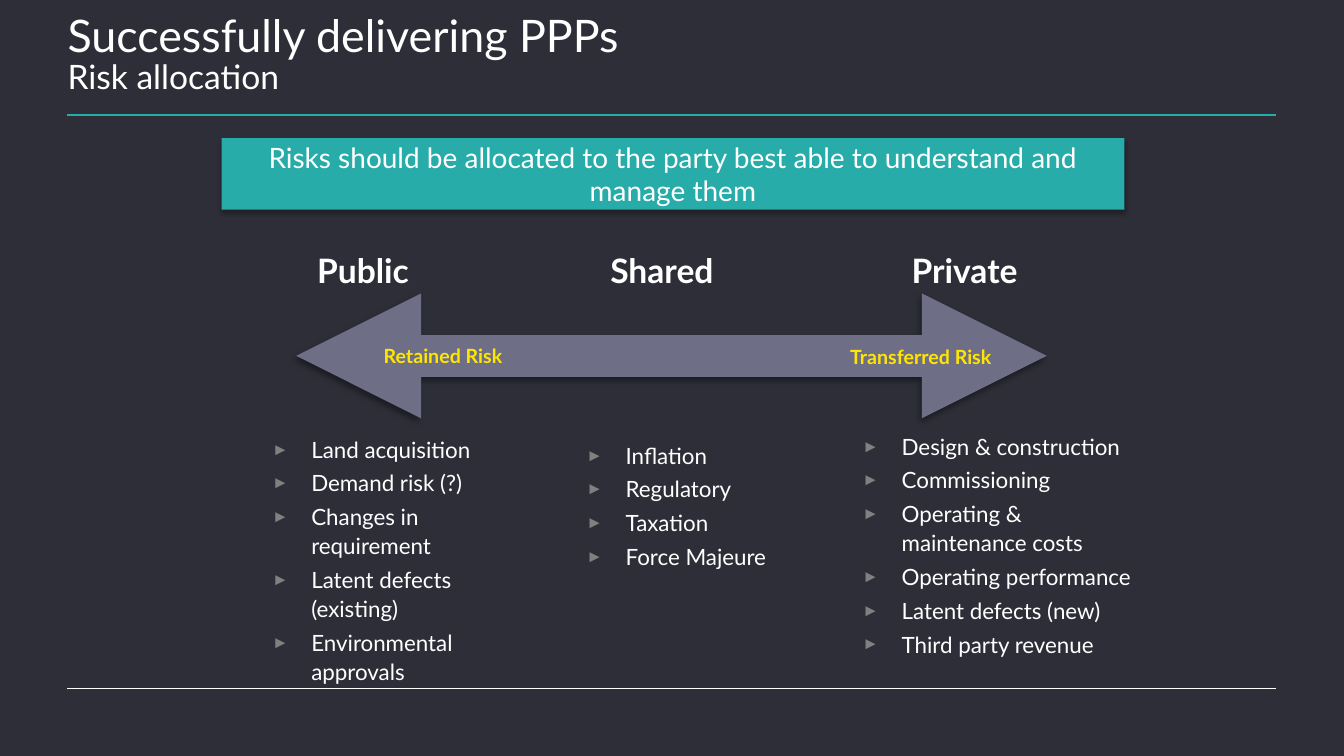
from collections import namedtuple
from copy import deepcopy

from lxml.etree import SubElement
from pptx import Presentation
from pptx.dml.color import RGBColor
from pptx.enum.shapes import MSO_CONNECTOR, MSO_SHAPE
from pptx.enum.text import MSO_ANCHOR, MSO_AUTO_SIZE, PP_ALIGN
from pptx.oxml.ns import qn
from pptx.util import Inches, Pt

COLORS = {
    "background": "2E2E38",
    "teal": "27ACAA",
    "white": "FFFFFF",
    "arrow": "6E6E86",
    "yellow": "FFE600",
    "bullet": "808080",
    "shadow": "000000",
}
FONT = "Lato"
Box = namedtuple("Box", "left top width height")

COLUMNS = [
    ("Public", 3.05, 1, Box(2.6, 4.3, 2.71, 2.47),
     ["Land acquisition", "Demand risk (?)", "Changes in requirement",
      "Latent defects (existing)", "Environmental approvals"]),
    ("Shared", 5.96, 2, Box(5.72, 4.36, 2.18, 2.32),
     ["Inflation", "Regulatory", "Taxation", "Force Majeure"]),
    ("Private", 8.95, 4, Box(8.46, 4.27, 2.92, 2.32),
     ["Design & construction", "Commissioning", "Operating & maintenance costs",
      "Operating performance", "Latent defects (new)", "Third party revenue"]),
]


def color(name):
    return RGBColor.from_string(COLORS[name])


def write(paragraph, text, size=16, bold=False, fill="white", align=PP_ALIGN.LEFT):
    paragraph.alignment = align
    run = paragraph.add_run()
    run.text = text
    run.font.name = FONT
    run.font.size = Pt(size)
    run.font.bold = bold
    run.font.color.rgb = color(fill)
    return run


def place(shape, box):
    shape.left, shape.top = Inches(box.left), Inches(box.top)
    shape.width, shape.height = Inches(box.width), Inches(box.height)


def set_margins(frame, left, top, right, bottom):
    frame.margin_left, frame.margin_top = Inches(left), Inches(top)
    frame.margin_right, frame.margin_bottom = Inches(right), Inches(bottom)


def add_effects(shape, opacity=0, blur=0, distance=0, angle=0):
    effects = SubElement(shape._element.spPr, qn("a:effectLst"))
    if opacity:
        shadow = SubElement(effects, qn("a:outerShdw"), blurRad=str(Pt(blur)),
                            dist=str(Pt(distance)), dir=str(angle * 60000),
                            algn="ctr", rotWithShape="0")
        shade = SubElement(shadow, qn("a:srgbClr"), val=COLORS["shadow"])
        SubElement(shade, qn("a:alpha"), val=str(opacity * 1000))


def add_rule(slide, left, top, width, fill, weight):
    rule = slide.shapes.add_connector(
        MSO_CONNECTOR.STRAIGHT, Inches(left), Inches(top), Inches(left + width), Inches(top))
    rule.line.color.rgb = color(fill)
    rule.line.width = Pt(weight)
    return rule


def add_label(slide, box, text, **text_format):
    label = slide.shapes.add_textbox(0, 0, 0, 0)
    place(label, box)
    frame = label.text_frame
    frame.word_wrap = True
    frame.auto_size = MSO_AUTO_SIZE.SHAPE_TO_FIT_TEXT
    write(frame.paragraphs[0], text, bold=True, **text_format)


def add_header(slide, box, title, subtitle):
    place(slide.shapes.title, box)
    frame = slide.shapes.title.text_frame
    frame.auto_size = MSO_AUTO_SIZE.NONE
    frame.vertical_anchor = MSO_ANCHOR.TOP
    set_margins(frame, 0, 0, 0, 0)
    paragraph = frame.paragraphs[0]
    paragraph.line_spacing = 0.85
    title_run = write(paragraph, title, size=32)
    paragraph.add_line_break()
    line_break = paragraph._p.find(qn("a:br"))
    line_break.append(deepcopy(title_run._r.rPr))
    write(paragraph, subtitle, size=24)
    add_effects(add_rule(slide, box.left, box.top + 0.98, 12, "teal", 1.5))


def add_banner(slide, box, text):
    banner = slide.shapes.add_shape(MSO_SHAPE.RECTANGLE, 0, 0, 0, 0)
    place(banner, box)
    banner.fill.solid()
    banner.fill.fore_color.rgb = color("teal")
    banner.line.fill.background()
    add_effects(banner, opacity=32, blur=3.5, distance=2.2, angle=90)
    frame = banner.text_frame
    frame.word_wrap = True
    frame.vertical_anchor = MSO_ANCHOR.MIDDLE
    write(frame.paragraphs[0], text, size=20, align=PP_ALIGN.CENTER)


def add_spectrum(slide, box):
    arrow = add_rule(slide, box.left, box.top + box.height / 2, box.width, "arrow", 29.73)
    for end in ("a:headEnd", "a:tailEnd"):
        SubElement(arrow.line._get_or_add_ln(), qn(end), type="triangle")
    add_effects(arrow, opacity=40, blur=4, distance=3, angle=135)
    for text, offset, drop in (("Retained Risk", 0.77, 0.45), ("Transferred Risk", 5.4, 0.46)):
        label_box = Box(box.left + offset, box.top + drop, 2.49, 0.34)
        add_label(slide, label_box, text, size=14, fill="yellow")


def add_bullet(paragraph):
    properties = paragraph._p.get_or_add_pPr()
    properties.set("marL", str(Inches(0.39)))
    properties.set("indent", str(-Inches(0.39)))
    bullet_color = SubElement(properties, qn("a:buClr"))
    SubElement(bullet_color, qn("a:srgbClr"), val=COLORS["bullet"])
    SubElement(properties, qn("a:buSzPct"), val="75000")
    SubElement(properties, qn("a:buFont"), typeface="Arial")
    SubElement(properties, qn("a:buChar"), char="►")


def add_risk_list(placeholder, box, risks):
    place(placeholder, box)
    frame = placeholder.text_frame
    frame.word_wrap = True
    frame.auto_size = MSO_AUTO_SIZE.NONE
    frame.vertical_anchor = MSO_ANCHOR.TOP
    set_margins(frame, 0.1, 0, 0.1, 0.05)
    for index, risk in enumerate(risks):
        paragraph = frame.add_paragraph() if index else frame.paragraphs[0]
        add_bullet(paragraph)
        paragraph.line_spacing = 1.09
        paragraph.space_before = Pt(3.2 if index else 0)
        write(paragraph, risk)


def add_footer(slide, box):
    add_effects(add_rule(slide, box.left, box.top, box.width, "white", 0.25))


def main():
    presentation = Presentation()
    presentation.slide_width = Inches(13.34)
    presentation.slide_height = Inches(7.5)
    slide = presentation.slides.add_slide(presentation.slide_layouts.get_by_name("Comparison"))
    slide.background.fill.solid()
    slide.background.fill.fore_color.rgb = color("background")
    placeholders = {item.placeholder_format.idx: item for item in slide.placeholders}

    add_header(slide, Box(0.67, 0.16, 12.01, 0.65), "Successfully delivering PPPs", "Risk allocation")
    add_footer(slide, Box(0.67, 6.83, 12, 0.67))
    add_banner(slide, Box(2.2, 1.37, 8.96, 0.71),
               "Risks should be allocated to the party best able to understand and manage them")
    add_spectrum(slide, Box(2.94, 2.91, 7.45, 1.24))
    for heading, heading_left, index, list_box, risks in COLUMNS:
        add_label(slide, Box(heading_left, 2.43, 1.76, 0.5), heading, size=24)
        add_risk_list(placeholders.pop(index), list_box, risks)
    for index, placeholder in placeholders.items():
        if index:
            placeholder._element.getparent().remove(placeholder._element)
    presentation.save("out.pptx")


if __name__ == "__main__":
    main()
